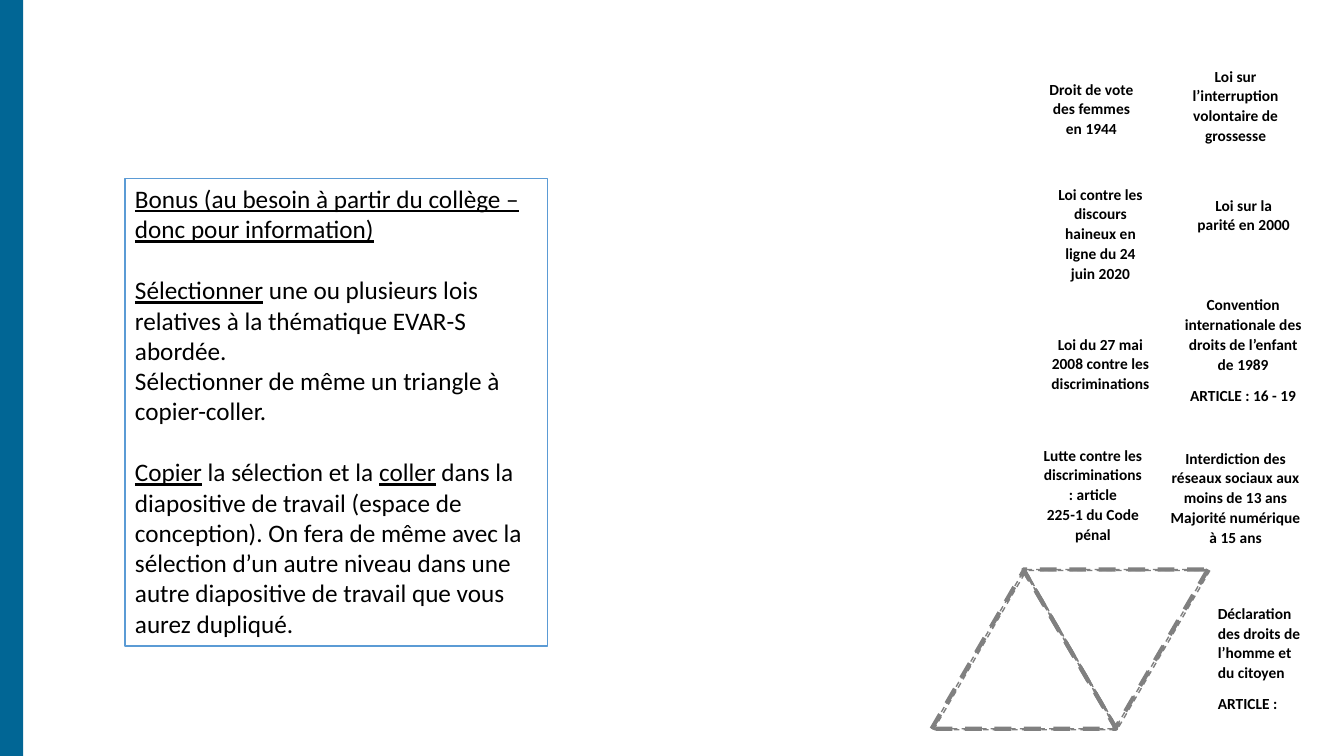
"""Build the slide of laws to select, with its instructions and triangles."""
from pptx import Presentation
from pptx import util as u
from pptx.dml.color import RGBColor
from pptx.enum import dml, shapes, text

BLACK = RGBColor(0x00, 0x00, 0x00)
WHITE = RGBColor(0xFF, 0xFF, 0xFF)
GREY = RGBColor(0x80, 0x80, 0x80)
BLUE = RGBColor(0x5B, 0x9B, 0xD5)
TEAL = RGBColor(0x01, 0x66, 0x95)

CENTER, LEFT = text.PP_ALIGN.CENTER, text.PP_ALIGN.LEFT
LAW_FONT = {"name": "Calibri", "size": u.Pt(11), "bold": True}
NOTE_FONT = {"name": "Calibri", "size": u.Pt(18)}

LAWS = [
    ((11.98, 5.93, 1.07, 1.48), LEFT, 8,
     ["Déclaration des droits de l’homme et du citoyen", "ARTICLE :"]),
    ((11.62, 2.87, 1.42, 1.42), CENTER, 8,
     ["Convention internationale des droits de l’enfant de 1989", "ARTICLE : 16 - 19"]),
    ((10.25, 0.73, 1.15, 1.16), CENTER, 8, ["Droit de vote des femmes en 1944"]),
    ((11.68, 0.6, 1.15, 1.16), CENTER, 8, ["Loi sur l’interruption volontaire de grossesse"]),
    ((11.76, 1.88, 1.15, 1.16), CENTER, 8, ["Loi sur la parité en 2000"]),
    ((10.3, 3.26, 1.23, 1.16), CENTER, 8, ["Loi du 27 mai 2008 contre les discriminations"]),
    ((10.34, 1.77, 1.15, 1.16), CENTER, 8,
     ["Loi contre les discours haineux en ligne du 24 juin 2020"]),
    ((11.46, 4.39, 1.59, 1.42), CENTER, 0,
     ["Interdiction des réseaux sociaux aux moins de 13 ans", "Majorité numérique à 15 ans"]),
    ((10.22, 4.36, 1.24, 1.16), CENTER, 0,
     ["Lutte contre les discriminations : article", "225-1 du Code pénal"]),
]

NOTE_BOX = (1.24, 1.77, 4.19, 4.64)
NOTE = [
    (0, [("Bonus (au besoin à partir du collège – donc pour information)", True)]),
    (22, [("Sélectionner", True),
          (" une ou plusieurs lois relatives à la thématique EVAR-S abordée.", False)]),
    (0, [("Sélectionner de même un triangle à copier-coller.", False)]),
    (22, [("Copier", True), (" la sélection et la ", False), ("coller", True),
          (" dans la diapositive de travail (espace de conception). On fera de même avec la "
           "sélection d’un autre niveau dans une autre diapositive de travail que vous aurez "
           "dupliqué.", False)]),
]

SIDE_BAR = (0, 0, 0.23, 7.5)
TRIANGLES = [(9.24, 5.66, 0), (10.15, 5.65, 180)]
TRIANGLE_SIZE = (1.83, 1.57)
OUTLINES = [(0.02, 0.01, 1), (0, 0, 1), (0, 0, 3)]


def inches(box):
    return [u.Inches(v) for v in box]


def set_all(obj, values):
    for name, value in values.items():
        setattr(obj, name, value)


def add_run(p, words, font):
    r = p.add_run()
    r.text = words
    set_all(r.font, font)
    r.font.color.rgb = BLACK


def add_shape(s, kind, box, fill=None, line=None, width=1):
    sp = s.shapes.add_shape(kind, *inches(box))
    sp.shadow.inherit = False
    if fill is None:
        sp.fill.background()
    else:
        sp.fill.solid()
        sp.fill.fore_color.rgb = fill
    if line is None:
        sp.line.fill.background()
    else:
        sp.line.color.rgb = line
        sp.line.width = u.Pt(width)
    return sp


def paragraphs(tf, items):
    for i, item in enumerate(items):
        yield (tf.add_paragraph() if i else tf.paragraphs[0]), item


def add_law(s, box, align, gap, lines):
    tf = s.shapes.add_textbox(*inches(box)).text_frame
    tf.word_wrap = True
    for p, words in paragraphs(tf, lines):
        set_all(p, {"alignment": align, "line_spacing": 1.07, "space_after": u.Pt(gap)})
        add_run(p, words, LAW_FONT)


def add_triangle(s, x, y, rotation):
    for dx, dy, width in OUTLINES:
        sp = add_shape(s, shapes.MSO_SHAPE.ISOSCELES_TRIANGLE,
                       (x + dx, y + dy, *TRIANGLE_SIZE), line=GREY, width=width)
        sp.rotation = rotation
        sp.line.dash_style = dml.MSO_LINE.DASH


def add_note(s):
    tf = add_shape(s, shapes.MSO_SHAPE.RECTANGLE, NOTE_BOX, WHITE, BLUE).text_frame
    set_all(tf, {"word_wrap": True, "vertical_anchor": text.MSO_ANCHOR.TOP,
                 "auto_size": text.MSO_AUTO_SIZE.SHAPE_TO_FIT_TEXT})
    for p, (before, runs) in paragraphs(tf, NOTE):
        set_all(p, {"alignment": LEFT, "space_before": u.Pt(before)})
        for words, underline in runs:
            add_run(p, words, {**NOTE_FONT, "underline": underline})


def main():
    prs = Presentation()
    set_all(prs, {"slide_width": u.Inches(13.33), "slide_height": u.Inches(7.5)})
    s = prs.slides.add_slide(prs.slide_layouts[6])
    for law in LAWS:
        add_law(s, *law)
    for triangle in TRIANGLES:
        add_triangle(s, *triangle)
    add_note(s)
    add_shape(s, shapes.MSO_SHAPE.RECTANGLE, SIDE_BAR, TEAL)
    prs.save("out.pptx")


if __name__ == "__main__":
    main()
